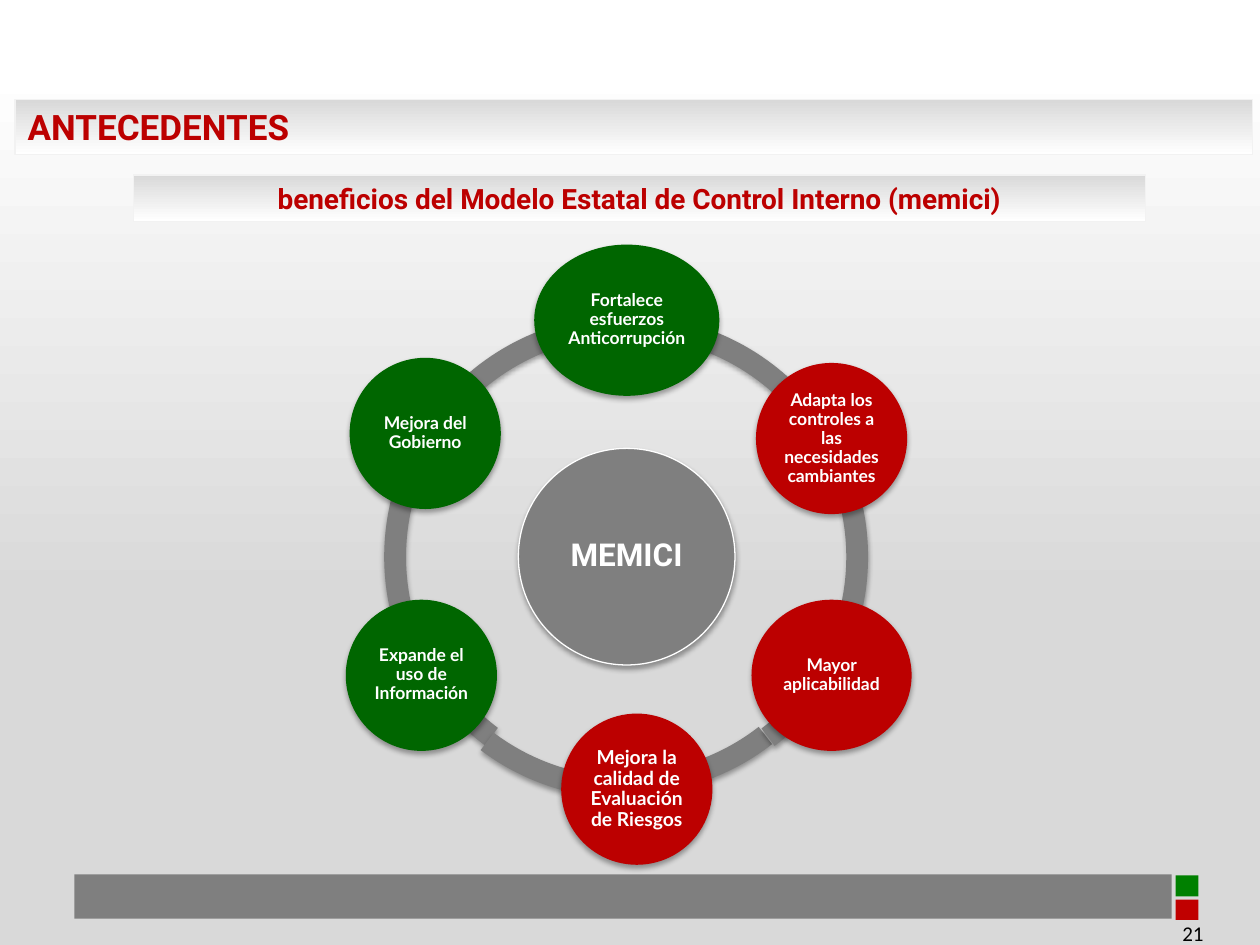
from lxml.etree import SubElement
from pptx import Presentation
from pptx.dml.color import RGBColor
from pptx.enum.shapes import MSO_SHAPE
from pptx.enum.text import MSO_ANCHOR, PP_ALIGN
from pptx.oxml.ns import qn
from pptx.util import Pt

WHITE = RGBColor(0xFF, 0xFF, 0xFF)
BLACK = RGBColor(0, 0, 0)
PALE = RGBColor(0xF2, 0xF2, 0xF2)
SILVER = RGBColor(0xD9, 0xD9, 0xD9)
GRAY = RGBColor(0x7F, 0x7F, 0x7F)
RED = RGBColor(0xBC, 0, 0)
GREEN = RGBColor(0, 0x66, 0)
FOOTER_RED = RGBColor(0xC0, 0, 0)
FOOTER_GREEN = RGBColor(0, 0x80, 0)

# Content: box is (left, top, width, height) in points
BANNERS = [
    ("ANTECEDENTES", (8.64, 57, 707, 31.5), 20, PP_ALIGN.LEFT),
    ("beneficios del Modelo Estatal de Control Interno (memici)",
     (76.3, 100, 578.2, 26.6), 16, PP_ALIGN.CENTER),
]
FOOTER = [
    ((671.8, 514, 13, 11.6), FOOTER_RED),
    ((671.8, 500.2, 13, 12.1), FOOTER_GREEN),
    ((42.5, 499.6, 627, 25.4), GRAY),
]
PAGE_NUMBER = "21"

# Ring arcs: left, top, start angle, end angle
RING_SIZE = 276.5
RING_THICKNESS = 0.05 * 0.9
RING_ARCS = [
    (221.8, 177.1, 126.89, 161.91),
    (219.6, 180, 90.09, 126.98),
    (218.2, 177.8, 52.19, 89.36),
    (221, 177.8, 18.68, 52.86),
    (219.6, 180, 198, 18),
    (219.6, 180, 162, 198),
]
HUB = ("MEMICI", (296.2, 256.2, 123.8, 123.8))

# Benefits: text, centre x, centre y, width, colour, text size
BENEFIT_HEIGHT = 86.4
BENEFITS = [
    ("Fortalece esfuerzos Anticorrupción", 358.2, 183, 105.8, GREEN, 10),
    ("Adapta los controles a las necesidades cambiantes", 475.2, 250.6, 86.4, RED, 10),
    ("Mayor aplicabilidad", 475.2, 385.9, 91.5, RED, 10),
    ("Mejora la calidad de Evaluación de Riesgos", 363.9, 451, 86.4, RED, 11),
    ("Expande el uso de Información", 240.8, 385.9, 86.4, GREEN, 10),
    ("Mejora del Gobierno", 243, 247.7, 86.4, GREEN, 10),
]


def add_part(slide, kind, box, color=None):
    part = slide.shapes.add_shape(kind, *(Pt(v) for v in box))
    part.shadow.inherit = False
    part.line.fill.background()
    if color is not None:
        part.fill.solid()
        part.fill.fore_color.rgb = color
    return part


def outline(part, color):
    part.line.color.rgb = color
    part.line.width = Pt(0.75)


def fade_upward(part, *stops):
    part.fill.gradient()
    part.fill.gradient_angle = 90
    for stop, (position, color) in zip(part.fill.gradient_stops, stops):
        stop.position = position
        stop.color.rgb = color


def cast_shadow(part):
    effects = part._element.spPr.find(qn("a:effectLst"))
    shadow = SubElement(effects, qn("a:outerShdw"), blurRad=str(Pt(3.1)),
                        dist=str(Pt(1.8)), dir="5400000", rotWithShape="0")
    color = SubElement(shadow, qn("a:srgbClr"), val="000000")
    SubElement(color, qn("a:alpha"), val="35000")


def write(part, text, font, size, color, align, anchor, bold=True, inset=None):
    frame = part.text_frame
    frame.word_wrap = True
    frame.vertical_anchor = anchor
    if inset is not None:
        frame.margin_left = frame.margin_right = Pt(inset)
        frame.margin_top = frame.margin_bottom = Pt(inset)
    paragraph = frame.paragraphs[0]
    paragraph.alignment = align
    run = paragraph.add_run()
    run.text = text
    run.font.name = font
    run.font.size = Pt(size)
    run.font.bold = bold
    run.font.color.rgb = color
    return paragraph


def add_disc(slide, text, box, color, font, size, inset):
    disc = add_part(slide, MSO_SHAPE.OVAL, box, color)
    cast_shadow(disc)
    paragraph = write(disc, text, font, size, WHITE, PP_ALIGN.CENTER,
                      MSO_ANCHOR.MIDDLE, inset=inset)
    paragraph.line_spacing = 0.9
    return disc


def main():
    deck = Presentation()
    deck.slide_width, deck.slide_height = Pt(720), Pt(540)
    slide = deck.slides.add_slide(deck.slide_layouts[6])

    # Backdrop and footer
    backdrop = add_part(slide, MSO_SHAPE.RECTANGLE, (0, 0, 720, 542.9))
    fade_upward(backdrop, (0.37, SILVER), (0.93, WHITE))
    for box, color in FOOTER:
        add_part(slide, MSO_SHAPE.RECTANGLE, box, color)
    page = slide.shapes.add_textbox(Pt(532.8), Pt(519.1), Pt(162), Pt(28.8))
    write(page, PAGE_NUMBER, "Calibri", 12, BLACK, PP_ALIGN.RIGHT,
          MSO_ANCHOR.MIDDLE, bold=False)

    # Ring
    for left, top, start, end in RING_ARCS:
        arc = add_part(slide, MSO_SHAPE.BLOCK_ARC,
                       (left, top, RING_SIZE, RING_SIZE), GRAY)
        # Angles are stored in 60000ths of a degree, scaled by 100000
        arc.adjustments[0] = start * 0.6
        arc.adjustments[1] = end * 0.6
        arc.adjustments[2] = RING_THICKNESS
        cast_shadow(arc)

    # Hub and benefits
    hub_text, hub_box = HUB
    hub = add_disc(slide, hub_text, hub_box, GRAY, "Roboto", 18, 2)
    outline(hub, WHITE)
    for text, x, y, width, color, size in BENEFITS:
        box = (x - width / 2, y - BENEFIT_HEIGHT / 2, width, BENEFIT_HEIGHT)
        add_disc(slide, text, box, color, "Lato", size, 1)

    # Title banners
    for text, box, size, align in BANNERS:
        banner = add_part(slide, MSO_SHAPE.RECTANGLE, box)
        fade_upward(banner, (0, WHITE), (1, SILVER))
        outline(banner, PALE)
        write(banner, text, "Roboto", size, RED, align, MSO_ANCHOR.TOP)

    deck.save("out.pptx")


if __name__ == "__main__":
    main()
